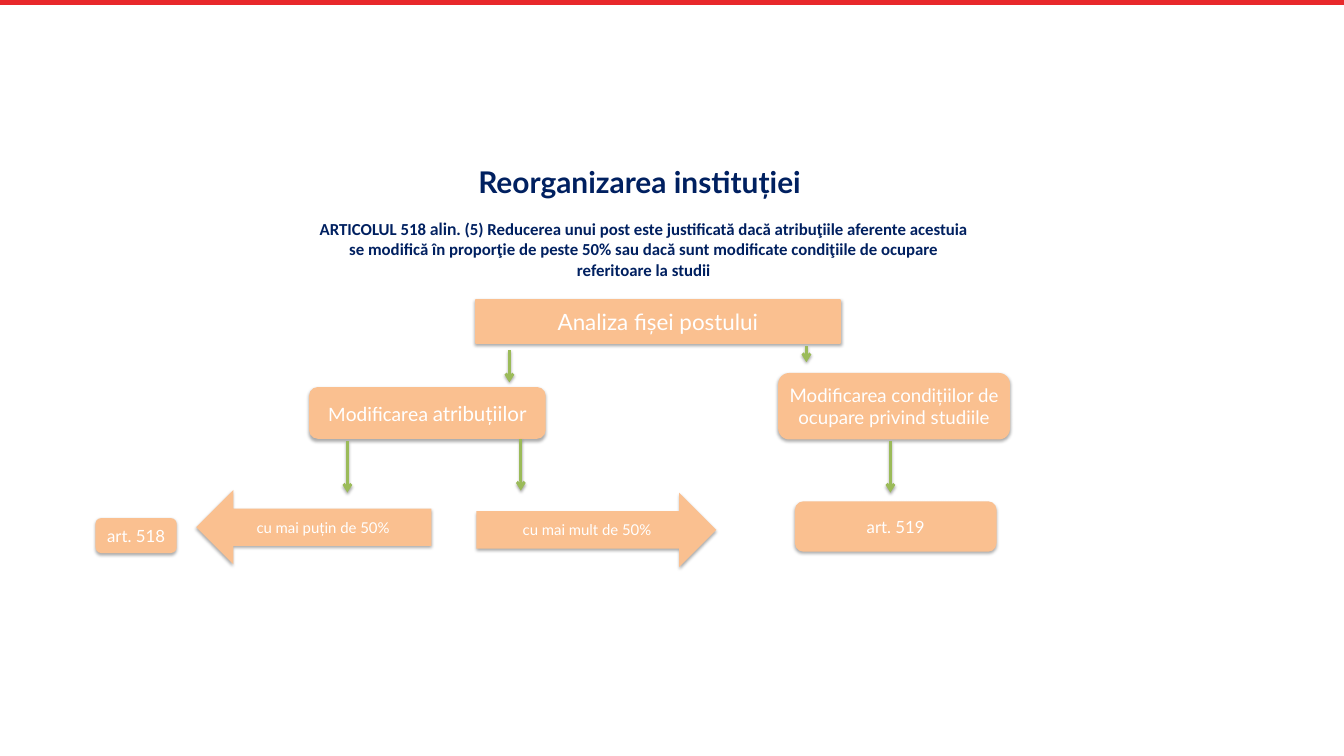
from lxml import etree
from pptx import Presentation
from pptx.dml.color import RGBColor
from pptx.enum.shapes import MSO_CONNECTOR, MSO_SHAPE as SHAPE
from pptx.enum.text import MSO_ANCHOR, PP_ALIGN
from pptx.oxml.ns import qn
from pptx.util import Inches, Pt

rgb = RGBColor.from_string
NAVY, PEACH, GREEN, RED, WHITE = "002060", "FAC090", "9BBB59", "E8282B", "FFFFFF"


def write(tf, runs, size, color, bold=False):
    tf.word_wrap = True
    p = tf.paragraphs[0]
    p.alignment = PP_ALIGN.CENTER
    for text, font in runs:
        r = p.add_run()
        r.text = text
        r.font.name = font
        r.font.size = Pt(size)
        r.font.bold = bold
        r.font.color.rgb = rgb(color)


def add_shadow(sp, alpha, blur, dist):
    effects = etree.SubElement(sp._element.spPr, qn("a:effectLst"))
    shadow = etree.SubElement(effects, qn("a:outerShdw"), blurRad=str(Pt(blur)),
                              dist=str(Pt(dist)), dir="5400000", rotWithShape="0")
    clr = etree.SubElement(shadow, qn("a:srgbClr"), val="000000")
    etree.SubElement(clr, qn("a:alpha"), val=str(alpha * 1000))


prs = Presentation()
prs.slide_width, prs.slide_height = Inches(20), Inches(11.25)
s = prs.slides.add_slide(prs.slide_layouts[5])

bar = s.shapes.add_connector(MSO_CONNECTOR.STRAIGHT, 0, Inches(0.04), Inches(20), Inches(0.04))
bar.line.color.rgb = rgb(RED)
bar.line.width = Pt(6)
etree.SubElement(bar._element.spPr, qn("a:effectLst"))

title = s.shapes.title
title.left, title.top, title.width, title.height = map(Inches, (4.52, 2.38, 10, 0.63))
title.text_frame.vertical_anchor = MSO_ANCHOR.TOP
write(title.text_frame, [("Reorganizarea instituției", "Lato")], 32, NAVY, True)

article = s.shapes.add_textbox(*map(Inches, (4.58, 3.21, 10, 1.02)))
write(article.text_frame, [
    ("ARTICOLUL 518", "Calibri"),
    (" alin. ", "Lato"),
    ("(5) Reducerea unui post este justificată dacă atribuţiile aferente acestuia se modifică "
     "în proporţie de peste 50% sau dacă sunt modificate condiţiile de ocupare referitoare "
     "la studii", "Calibri"),
], 18, NAVY, True)

boxes = [
    (SHAPE.RECTANGLE, 7.08, 4.46, 5.42, 0.64, 24, [("Analiza fișei postului", "Lato")]),
    (SHAPE.FLOWCHART_ALTERNATE_PROCESS, 4.6, 5.76, 3.52, 0.77, 22,
     [("Modificarea ", "Calibri"), ("atribuțiilor", "Lato")]),
    (SHAPE.ROUNDED_RECTANGLE, 11.58, 5.55, 3.45, 0.99, 20,
     [("Modificarea condițiilor de ocupare privind studiile", "Lato")]),
    (SHAPE.FLOWCHART_ALTERNATE_PROCESS, 1.42, 7.71, 1.21, 0.52, 18, [("art. 518", "Lato")]),
    (SHAPE.LEFT_ARROW, 2.92, 7.29, 3.5, 1.11, 16, [("cu mai puțin de 50%", "Lato")]),
    (SHAPE.RIGHT_ARROW, 7.09, 7.33, 3.57, 1.11, 16, [("cu mai mult de 50%", "Lato")]),
    (SHAPE.ROUNDED_RECTANGLE, 11.83, 7.46, 3, 0.75, 18, [("art. 519", "Lato")]),
]
for kind, x, y, w, h, size, runs in boxes:
    sp = s.shapes.add_shape(kind, *map(Inches, (x, y, w, h)))
    sp.fill.solid()
    sp.fill.fore_color.rgb = rgb(PEACH)
    if kind == SHAPE.RECTANGLE:
        sp.line.color.rgb = rgb(PEACH)
        sp.line.width = Pt(2)
    else:
        sp.line.fill.background()
    add_shadow(sp, 32, 3.5, 2.2)
    sp.text_frame.vertical_anchor = MSO_ANCHOR.MIDDLE
    write(sp.text_frame, runs, size, WHITE)

arrows = [(7.58, 5.21, 5.69), (12, 5.15, 5.39), (5.17, 6.57, 7.33),
          (7.75, 6.54, 7.3), (13.25, 6.57, 7.33)]
for x, top, bottom in arrows:
    arrow = s.shapes.add_connector(MSO_CONNECTOR.STRAIGHT, *map(Inches, (x, top, x, bottom)))
    arrow.line.color.rgb = rgb(GREEN)
    arrow.line.width = Pt(3)
    etree.SubElement(arrow.line._get_or_add_ln(), qn("a:tailEnd"), type="arrow")
    add_shadow(arrow, 35, 3.1, 1.8)

prs.save("out.pptx")
